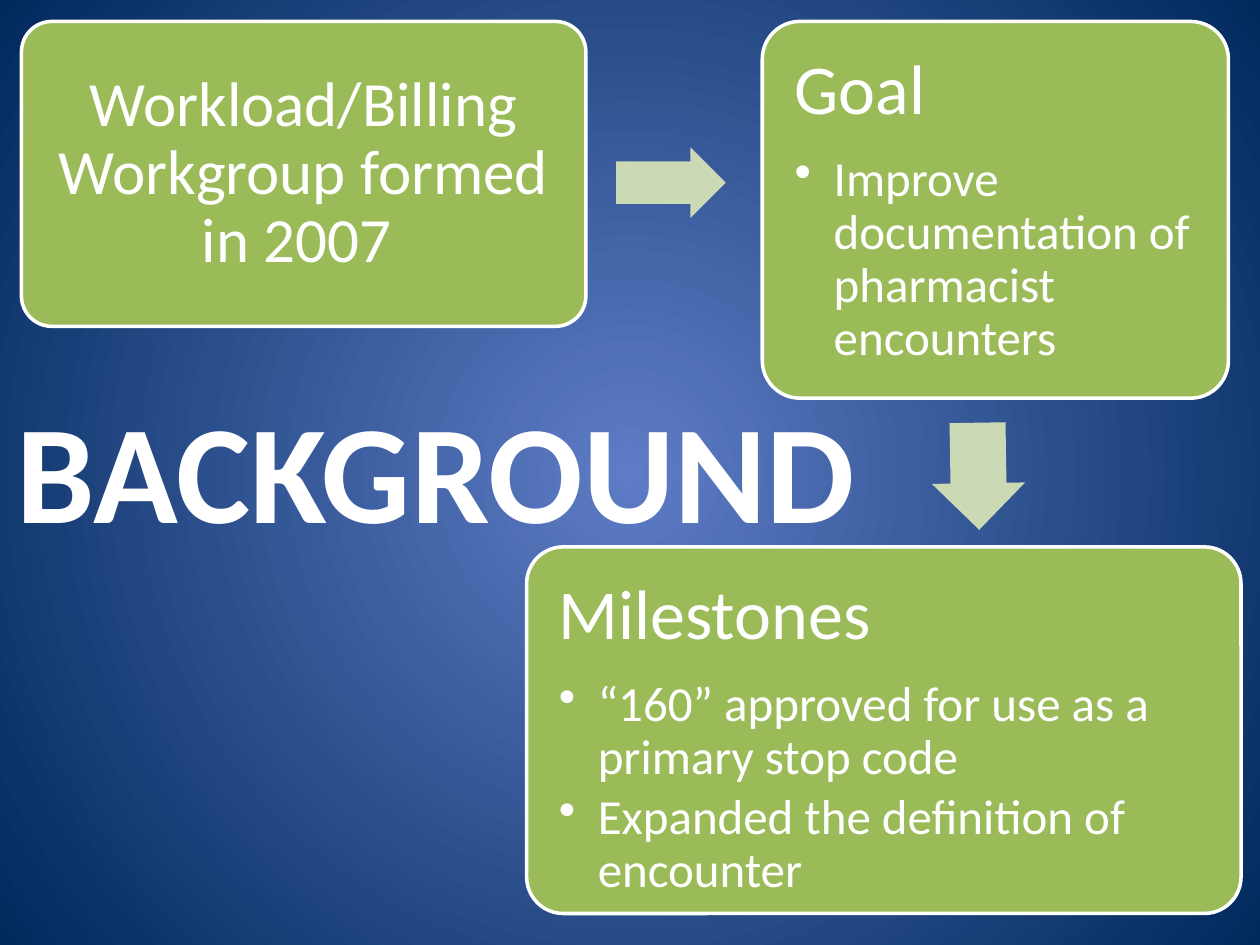
from lxml.etree import SubElement
from pptx import Presentation
from pptx.dml.color import RGBColor
from pptx.enum.shapes import MSO_SHAPE
from pptx.enum.text import MSO_ANCHOR, PP_ALIGN
from pptx.oxml.ns import qn
from pptx.util import Inches, Pt

WHITE, GREEN, PALE_GREEN = "FFFFFF", "9BBB59", "CBDAB5"
CENTRE_BLUE, EDGE_BLUE = "5E7CC5", "00295C"


def color(value):
    return RGBColor.from_string(value)


def set_background(slide):
    """Fill the slide with a gradient that runs out from its centre."""
    fill = slide.background.fill
    fill.gradient()
    for stop, value in zip(fill.gradient_stops, (CENTRE_BLUE, EDGE_BLUE)):
        stop.color.rgb = color(value)
    gradient = next(slide.element.iter(qn("a:gradFill")))
    linear = gradient.find(qn("a:lin"))
    if linear is not None:
        gradient.remove(linear)
    circle = SubElement(gradient, qn("a:path"), path="circle")
    SubElement(circle, qn("a:fillToRect"),
               {side: "50000" for side in ("l", "t", "r", "b")})


def add_run(paragraph, text, size, bold=False):
    run = paragraph.add_run()
    run.text = text
    run.font.name = "Calibri"
    run.font.size = Pt(size)
    run.font.bold = bold
    run.font.color.rgb = color(WHITE)


def add_bullet(paragraph):
    properties = paragraph._p.get_or_add_pPr()
    properties.set("marL", str(Inches(0.31)))
    properties.set("indent", str(-Inches(0.31)))
    SubElement(properties, qn("a:buChar"), char="•")


def add_card(slide, box, heading, size, bullets=()):
    """Add a rounded card; without bullets its heading is centred."""
    card = slide.shapes.add_shape(MSO_SHAPE.ROUNDED_RECTANGLE, *map(Inches, box))
    card.adjustments[0] = 0.1
    card.shadow.inherit = False
    card.fill.solid()
    card.fill.fore_color.rgb = color(GREEN)
    card.line.color.rgb = color(WHITE)
    card.line.width = Pt(2)

    frame = card.text_frame
    frame.word_wrap = True
    margin = Inches(0.17 if bullets else 0.15)
    frame.margin_left = frame.margin_right = margin
    frame.margin_top = frame.margin_bottom = margin
    frame.vertical_anchor = MSO_ANCHOR.TOP if bullets else MSO_ANCHOR.MIDDLE

    paragraph = frame.paragraphs[0]
    paragraph.alignment = PP_ALIGN.LEFT if bullets else PP_ALIGN.CENTER
    paragraph.line_spacing = 0.9
    paragraph.space_after = Pt(14)
    add_run(paragraph, heading, size)
    for bullet in bullets:
        paragraph = frame.add_paragraph()
        paragraph.level = 1
        paragraph.alignment = PP_ALIGN.LEFT
        paragraph.line_spacing = 0.9
        paragraph.space_after = Pt(4)
        add_bullet(paragraph)
        add_run(paragraph, bullet, 28)


def add_arrow(slide, box, rotation=0):
    arrow = slide.shapes.add_shape(MSO_SHAPE.RIGHT_ARROW, *map(Inches, box))
    arrow.adjustments[0] = 0.6
    arrow.adjustments[1] = 0.5
    arrow.rotation = rotation
    arrow.shadow.inherit = False
    arrow.fill.solid()
    arrow.fill.fore_color.rgb = color(PALE_GREEN)
    arrow.line.fill.background()


def place_title(slide, box, text):
    title = slide.shapes.title
    title.left, title.top, title.width, title.height = map(Inches, box)
    frame = title.text_frame
    frame.word_wrap = True
    frame.vertical_anchor = MSO_ANCHOR.MIDDLE
    paragraph = frame.paragraphs[0]
    paragraph.alignment = PP_ALIGN.CENTER
    add_run(paragraph, text, 80, bold=True)


def main():
    presentation = Presentation()
    presentation.slide_width, presentation.slide_height = Inches(10), Inches(7.5)
    slide = presentation.slides.add_slide(presentation.slide_layouts[5])
    set_background(slide)
    add_card(slide, (0.17, 0.17, 4.48, 2.42),
             "Workload/Billing Workgroup formed in 2007 ", 36)
    add_arrow(slide, (4.89, 1.17, 0.87, 0.56))
    add_card(slide, (6.05, 0.17, 3.7, 2.99), "Goal", 40,
             ["Improve documentation of pharmacist encounters"])
    add_arrow(slide, (7.34, 3.41, 0.85, 0.74), rotation=89.1)
    add_card(slide, (4.18, 4.34, 5.67, 2.91), "Milestones", 40,
             ["“160” approved for use as a primary stop code",
              "Expanded the definition of encounter"])
    place_title(slide, (0, 2.92, 6.92, 1.58), "BACKGROUND")
    presentation.save("out.pptx")


if __name__ == "__main__":
    main()
